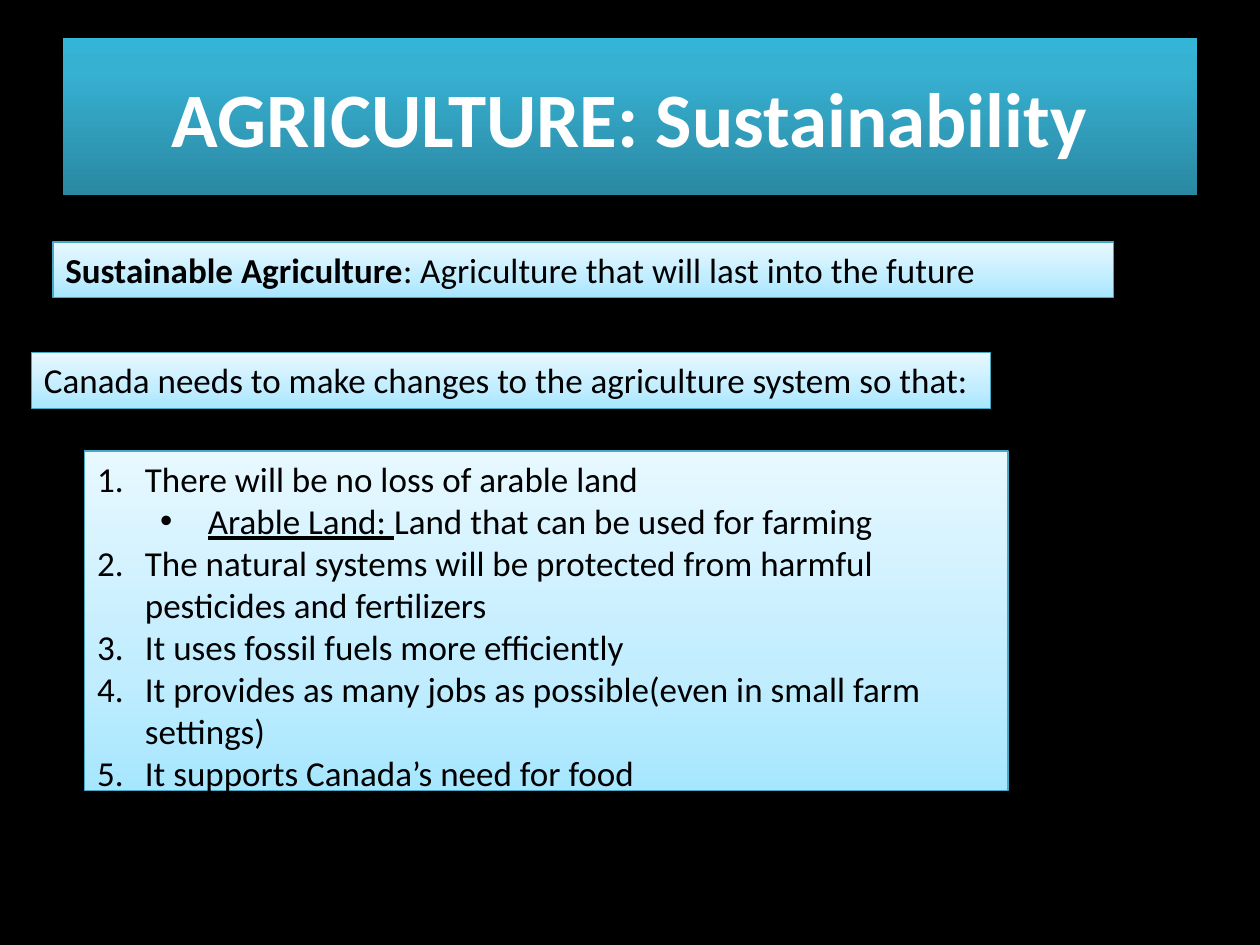
from copy import deepcopy

from lxml import etree
from pptx import Presentation
from pptx.dml import color
from pptx.enum import text
from pptx.oxml import ns
from pptx.util import Inches, Pt

TITLE_STOPS = [(0, "2A88A2"), (0.8, "37B1D2"), (1, "34B4D6")]
PANEL_STOPS = [(0, "A7E6FF"), (0.35, "C1EDFF"), (1, "E7F8FF")]


def rgb(value):
    return color.RGBColor.from_string(value)


class SlideStyle:
    """Holds the look of the slide and adds each kind of element."""

    title_font = {"name": "Calibri", "size": Pt(44), "bold": True}
    body_font = {"name": "Calibri", "size": Pt(20), "bold": False}
    hanging = 0.38

    def __init__(self, slide):
        self.slide = slide
        slide.background.fill.solid()
        slide.background.fill.fore_color.rgb = rgb("000000")

    def place(self, panel, box):
        sides = zip(("left", "top", "width", "height"), box)
        for side, inches in sides:
            setattr(panel, side, Inches(inches))

    def gradient(self, panel, stops):
        panel.fill.gradient()
        panel.fill.gradient_angle = 90
        stop_list = panel._element.xpath(".//a:gsLst")[0]
        stop_list.append(deepcopy(stop_list[-1]))
        for stop, (position, hue) in zip(panel.fill.gradient_stops, stops):
            stop.position = position
            stop.color.rgb = rgb(hue)

    def panel_look(self, panel, wrap=True):
        self.gradient(panel, PANEL_STOPS)
        panel.line.color.rgb = rgb("46AAC5")
        panel.line.width = Pt(0.75)
        frame = panel.text_frame
        frame.word_wrap = wrap
        frame.auto_size = text.MSO_AUTO_SIZE.SHAPE_TO_FIT_TEXT
        frame.vertical_anchor = text.MSO_ANCHOR.TOP

    def add_words(self, paragraph, wording, font, hue="000000", **changes):
        run = paragraph.add_run()
        run.text = wording
        for key, value in {**font, **changes}.items():
            setattr(run.font, key, value)
        run.font.color.rgb = rgb(hue)

    def title(self, wording, box):
        heading = self.slide.shapes.title
        self.place(heading, box)
        self.gradient(heading, TITLE_STOPS)
        heading.text_frame.vertical_anchor = text.MSO_ANCHOR.MIDDLE
        line = heading.text_frame.paragraphs[0]
        line.alignment = text.PP_ALIGN.CENTER
        self.add_words(line, wording, self.title_font, "FFFFFF")

    def statement(self, parts, box, wrap=True):
        panel = self.slide.shapes.add_textbox(*map(Inches, box))
        self.panel_look(panel, wrap)
        for wording, changes in parts:
            self.add_words(panel.text_frame.paragraphs[0], wording, self.body_font, **changes)

    def marker(self, paragraph, level):
        props = paragraph._p.get_or_add_pPr()
        props.set("marL", str(Inches(self.hanging + level * 0.5)))
        props.set("indent", str(-Inches(self.hanging)))
        marks = [("a:buFont", {"typeface": "Arial"}), ("a:buChar", {"char": "•"})]
        if level == 0:
            marks = [("a:buFont", {"typeface": "+mj-lt"}), ("a:buAutoNum", {"type": "arabicPeriod"})]
        for tag, values in marks:
            etree.SubElement(props, ns.qn(tag), values)

    def goals(self, items, box):
        body = self.slide.placeholders[1]
        self.place(body, box)
        self.panel_look(body)
        frame = body.text_frame
        for index, (level, parts) in enumerate(items):
            line = frame.add_paragraph() if index else frame.paragraphs[0]
            line.level = level
            line.space_before = Pt(0)
            self.marker(line, level)
            for wording, changes in parts:
                self.add_words(line, wording, self.body_font, **changes)


def main():
    deck = Presentation()
    deck.slide_width, deck.slide_height = Inches(10), Inches(7.5)
    page = SlideStyle(deck.slides.add_slide(deck.slide_layouts[1]))

    # Heading
    page.title("AGRICULTURE: Sustainability", (0.5, 0.3, 9, 1.25))

    # Numbered goals with a definition under the first
    page.goals([
        (0, [("There will be no loss of arable land", {})]),
        (1, [("Arable Land: ", {"underline": True}),
             ("Land that can be used for farming", {})]),
        (0, [("The natural systems will be protected from harmful pesticides and fertilizers", {})]),
        (0, [("It uses fossil fuels more efficiently", {})]),
        (0, [("It provides as many jobs as possible(even in small farm settings)", {})]),
        (0, [("It supports Canada’s need for food", {})]),
    ], (0.67, 3.58, 7.33, 2.79))

    # Definition and lead-in
    page.statement([("Sustainable Agriculture", {"bold": True}),
                    (": Agriculture that will last into the future", {})],
                   (0.42, 1.92, 8.42, 0.44))
    page.statement([("Canada needs to make changes to the agriculture system so that:", {})],
                   (0.25, 2.8, 7.61, 0.44), wrap=False)

    deck.save("out.pptx")


if __name__ == "__main__":
    main()
